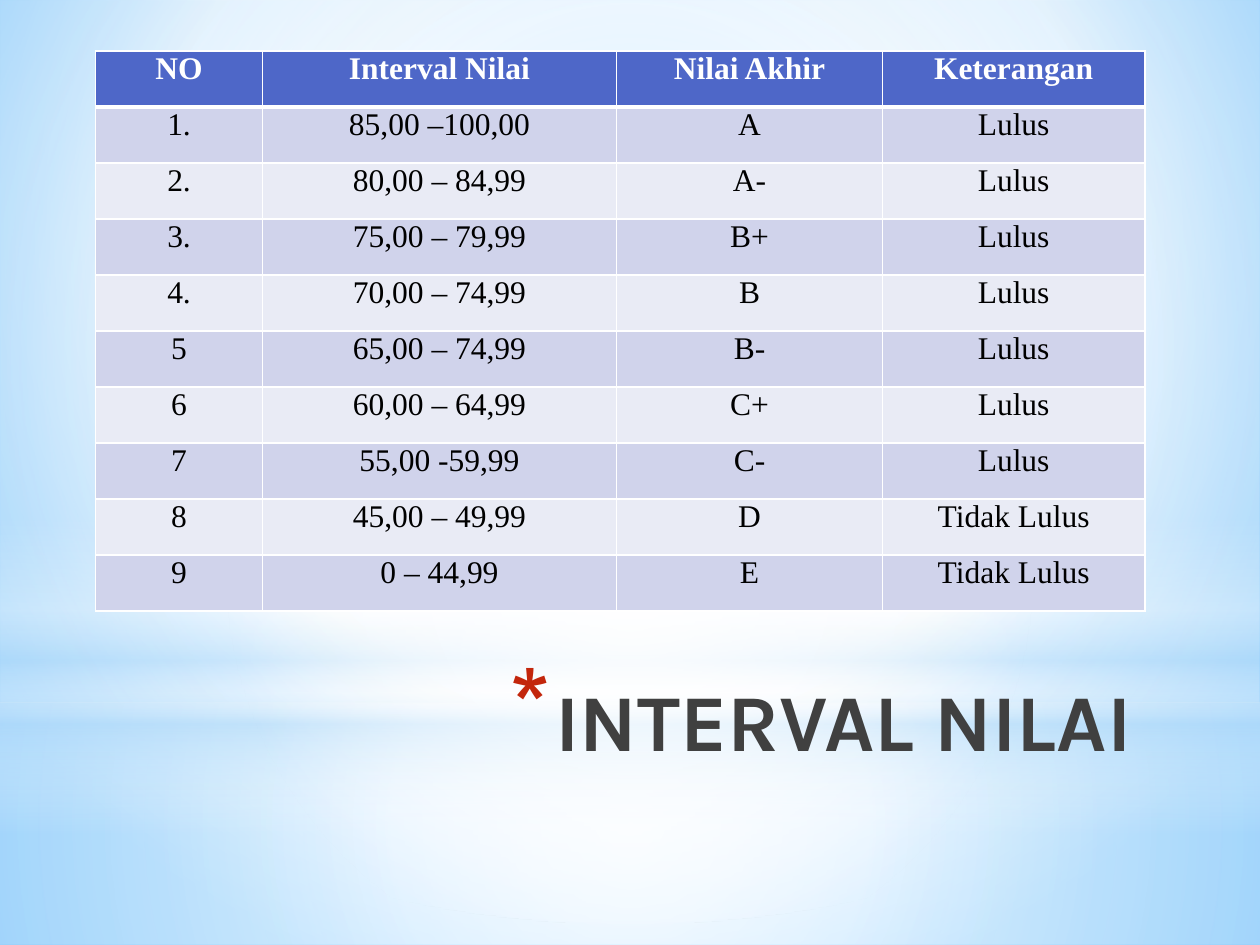
from typing import NamedTuple

from lxml import etree
from pptx import Presentation
from pptx.dml.color import RGBColor
from pptx.enum.shapes import MSO_SHAPE as Shape
from pptx.enum.text import MSO_ANCHOR as Anchor, MSO_AUTO_SIZE as AutoSize, PP_ALIGN as Align
from pptx.oxml import parse_xml
from pptx.oxml.ns import nsdecls, qn
from pptx.util import Cm, Pt

COLORS = {
    "white": "FFFFFF", "black": "000000", "title": "404040", "bullet": "C3260C",
    "header": "4E67C8", "odd": "D0D3EB", "even": "E9EBF5",
    "sky": "B4DCFA", "sky_mid": "9ED5FF", "sky_deep": "5BB9FF",
}
CENTER = (50, 50, 50, 50)


class Stop(NamedTuple):
    pos: int
    color: str
    alpha: int = 100


class Glow(NamedTuple):
    kind: Shape
    top: float
    height: float
    stops: list[Stop]
    focus: tuple | None = CENTER  # None makes a vertical linear gradient


GLOWS = [
    Glow(Shape.RECTANGLE, 14.17, 4.88,
         [Stop(0, "white", 91), Stop(37, "white", 76), Stop(100, "sky", 79)]),
    Glow(Shape.RECTANGLE, 0, 14.17,
         [Stop(0, "white", 89), Stop(48, "white", 62), Stop(100, "sky", 79)]),
    Glow(Shape.RECTANGLE, 10.46, 6.35,
         [Stop(0, "white", 0), Stop(29, "white", 30), Stop(45, "sky", 40),
          Stop(55, "white", 26), Stop(65, "sky", 60), Stop(100, "white", 0)], None),
    Glow(Shape.OVAL, 4.45, 14.17, [Stop(0, "white"), Stop(56, "white", 0)]),
]

HEADERS = ["NO", "Interval Nilai", "Nilai Akhir", "Keterangan"]
GRADES = [
    ("1.", "85,00 –100,00", "A", "Lulus"),
    ("2.", "80,00 – 84,99", "A-", "Lulus"),
    ("3.", "75,00 – 79,99", "B+", "Lulus"),
    ("4.", "70,00 – 74,99", "B", "Lulus"),
    ("5", "65,00 – 74,99", "B-", "Lulus"),
    ("6", "60,00 – 64,99", "C+", "Lulus"),
    ("7", "55,00 -59,99", "C-", "Lulus"),
    ("8", "45,00 – 49,99", "D", "Tidak Lulus"),
    ("9", "0 – 44,99", "E", "Tidak Lulus"),
]
COL_WIDTHS = [3.36, 7.14, 5.36, 5.29]
ROW_HEIGHT = 1.13


def rgb(name: str) -> RGBColor:
    return RGBColor.from_string(COLORS[name])


def set_gradient(fill, element, stops: list[Stop], focus: tuple | None) -> None:
    """Give the fill found inside element its own gradient stops."""
    fill.gradient()
    old = element.find(".//" + qn("a:gradFill"))
    marks = "".join(
        f'<a:gs pos="{s.pos * 1000}"><a:srgbClr val="{COLORS[s.color]}">'
        f'<a:alpha val="{s.alpha * 1000}"/></a:srgbClr></a:gs>' for s in stops)
    if focus:
        sides = " ".join(f'{side}="{v * 1000}"' for side, v in zip("ltrb", focus))
        shade = f'<a:path path="circle"><a:fillToRect {sides}/></a:path>'
    else:
        shade = '<a:lin ang="5400000" scaled="0"/>'
    new = parse_xml(f'<a:gradFill {nsdecls("a")} rotWithShape="1">'
                    f'<a:gsLst>{marks}</a:gsLst>{shade}</a:gradFill>')
    old.getparent().replace(old, new)


def add_glow(slide, glow: Glow) -> None:
    s = slide.shapes.add_shape(glow.kind, 0, Cm(glow.top), Cm(25.4), Cm(glow.height))
    s.shadow.inherit = False
    s.line.fill.background()
    set_gradient(s.fill, s._element.spPr, glow.stops, glow.focus)


def format_title(title) -> None:
    title.left, title.top, title.width, title.height = Cm(4.98), Cm(13.39), Cm(18.08), Cm(3.18)
    tf = title.text_frame
    tf.text = "INTERVAL NILAI"
    tf.auto_size = AutoSize.NONE
    tf.vertical_anchor = Anchor.TOP
    p = tf.paragraphs[0]
    p.alignment = Align.RIGHT
    p.font.name, p.font.size, p.font.bold = "Karla", Pt(46), True
    p.font.color.rgb = rgb("title")
    # Asterisk bullet with a hanging indent
    pPr = p._p.get_or_add_pPr()
    pPr.set("marL", str(Cm(0.89)))
    pPr.set("indent", str(-Cm(0.89)))
    bullet = [f'<a:buClr {nsdecls("a")}><a:srgbClr val="{COLORS["bullet"]}"/></a:buClr>',
              f'<a:buSzPct {nsdecls("a")} val="128000"/>',
              f'<a:buChar {nsdecls("a")} char="*"/>']
    for i, xml in enumerate(bullet):
        pPr.insert(i, parse_xml(xml))


def set_borders(cell, widths: dict[str, float]) -> None:
    tcPr = cell._tc.get_or_add_tcPr()
    for i, (side, width) in enumerate(widths.items()):
        ln = etree.Element(qn(f"a:ln{side}"), w=str(Pt(width)))
        fill = etree.SubElement(ln, qn("a:solidFill"))
        etree.SubElement(fill, qn("a:srgbClr"), val=COLORS["white"])
        tcPr.insert(i, ln)


def fill_cell(cell, text: str, row: int) -> None:
    is_header = row == 0
    cell.margin_left = cell.margin_right = cell.margin_top = cell.margin_bottom = 0
    cell.fill.solid()
    cell.fill.fore_color.rgb = rgb("header" if is_header else "odd" if row % 2 else "even")
    set_borders(cell, {"L": 1, "R": 1, "T": 3 if row == 1 else 1, "B": 3 if is_header else 1})
    cell.text = text
    p = cell.text_frame.paragraphs[0]
    p.alignment = Align.CENTER
    p.space_before = Pt(2.6)
    p.font.name, p.font.size, p.font.bold = "Times New Roman", Pt(18), is_header
    p.font.color.rgb = rgb("white" if is_header else "black")


def add_grade_table(slide) -> None:
    rows = [HEADERS, *GRADES]
    table = slide.shapes.add_table(len(rows), len(HEADERS), Cm(1.93), Cm(1.03),
                                   Cm(sum(COL_WIDTHS)), Cm(ROW_HEIGHT * len(rows))).table
    for column, width in zip(table.columns, COL_WIDTHS):
        column.width = Cm(width)
    for r, values in enumerate(rows):
        table.rows[r].height = Cm(ROW_HEIGHT)
        for c, text in enumerate(values):
            fill_cell(table.cell(r, c), text, r)


def main() -> None:
    prs = Presentation()
    prs.slide_width, prs.slide_height = Cm(25.4), Cm(19.05)
    slide = prs.slides.add_slide(prs.slide_layouts[5])

    # Background and light effects
    set_gradient(slide.background.fill, slide._element,
                 [Stop(0, "sky_mid"), Stop(60, "white"), Stop(100, "sky_deep")],
                 (20, 10, 20, 60))
    for glow in GLOWS:
        add_glow(slide, glow)

    # Title, brought in front of the light effects
    title = slide.shapes.title
    format_title(title)
    slide.shapes._spTree.append(title._element)

    # Grade table
    add_grade_table(slide)
    prs.save("out.pptx")


if __name__ == "__main__":
    main()
